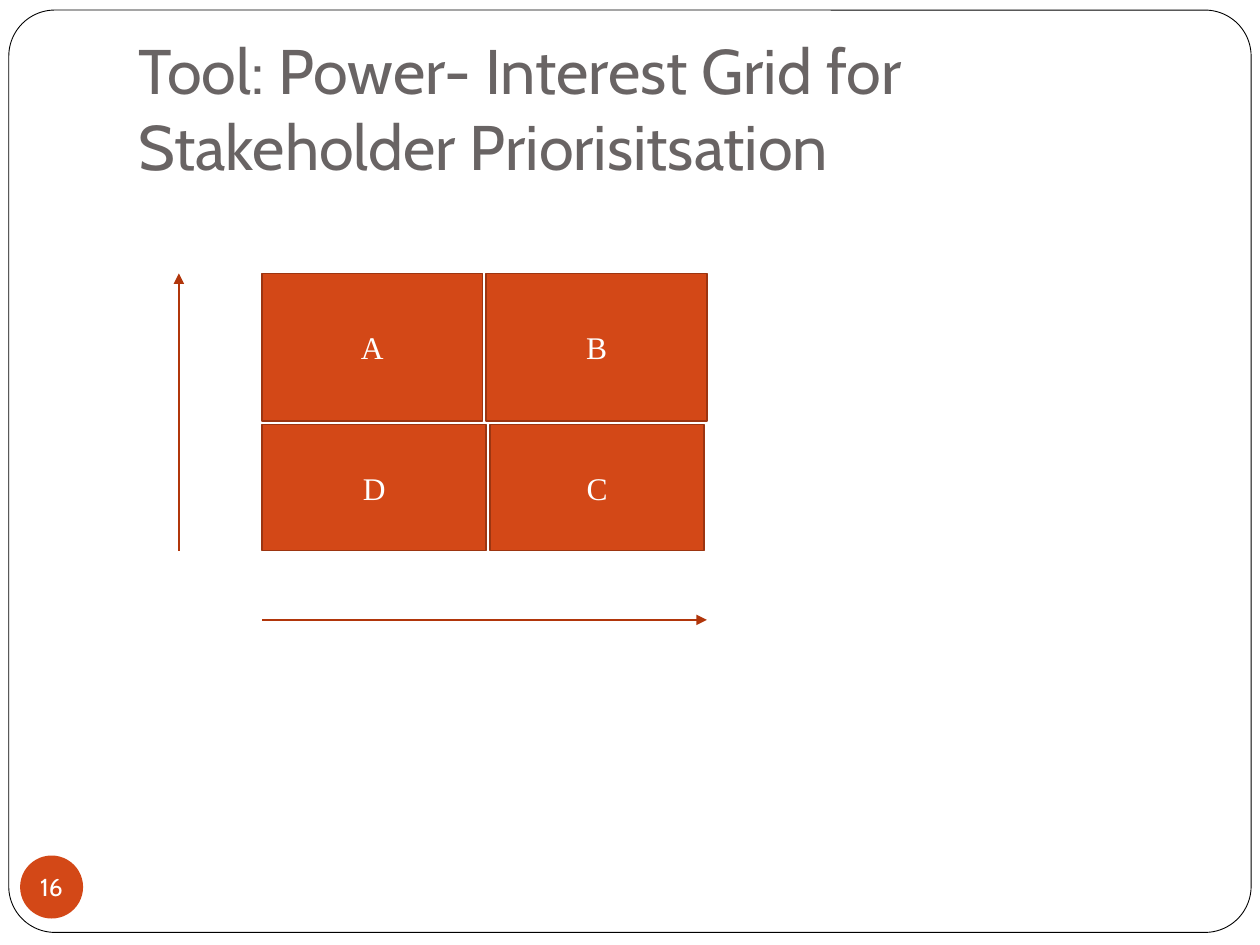
from dataclasses import dataclass
from typing import Any

from lxml import etree
from pptx import Presentation
from pptx.dml.color import RGBColor
from pptx.enum import shapes as sh, text as tx
from pptx.oxml import ns
from pptx.util import Inches, Pt

HUES = {
    "paper": "FFFFFF",
    "frame": "000000",
    "title": "696464",
    "fill": "D34817",
    "edge": "9C3511",
    "arrow": "B1360B",
}
LEFT, TOP, RIGHT, BASE = 2.08, 2.17, 5.61, 4.37
LOW = 3.37


@dataclass(frozen=True)
class Box:
    kind: Any
    x: float
    y: float
    w: float
    h: float
    fill: str
    line: str = ""
    width: float = 1
    label: str = ""
    size: int = 18
    face: str = "Times New Roman"


@dataclass(frozen=True)
class Arrow:
    x1: float
    y1: float
    x2: float
    y2: float


def hue(name: str) -> RGBColor:
    return RGBColor.from_string(HUES[name])


def apply(obj: Any, vals: dict[str, Any]) -> None:
    for key, val in vals.items():
        setattr(obj, key, val)


def write(frame: Any, label: str, face: str, size: int, tint: str, align: Any) -> None:
    frame.text = label
    para = frame.paragraphs[0]
    para.alignment = align
    font = para.runs[0].font
    apply(font, {"name": face, "size": Pt(size)})
    font.color.rgb = hue(tint)


def draw_box(slide: Any, box: Box) -> Any:
    place = [Inches(v) for v in (box.x, box.y, box.w, box.h)]
    shape = slide.shapes.add_shape(box.kind, *place)
    shape.shadow.inherit = False
    shape.fill.solid()
    shape.fill.fore_color.rgb = hue(box.fill)
    if box.line:
        shape.line.color.rgb = hue(box.line)
        shape.line.width = Pt(box.width)
    else:
        shape.line.fill.background()
    if box.label:
        frame = shape.text_frame
        frame.vertical_anchor = tx.MSO_ANCHOR.MIDDLE
        write(frame, box.label, box.face, box.size, "paper", tx.PP_ALIGN.CENTER)
    return shape


def draw_arrow(slide: Any, arrow: Arrow) -> None:
    ends = [Inches(v) for v in (arrow.x1, arrow.y1, arrow.x2, arrow.y2)]
    link = slide.shapes.add_connector(sh.MSO_CONNECTOR.STRAIGHT, *ends)
    link.line.color.rgb = hue("arrow")
    link.line.width = Pt(0.75)
    etree.SubElement(link.line._get_or_add_ln(), ns.qn("a:tailEnd"), type="triangle")
    etree.SubElement(link._element.spPr, ns.qn("a:effectLst"))


def draw_title(slide: Any, label: str) -> None:
    title = slide.shapes.title
    apply(title, {
        "left": Inches(1), "top": Inches(0.3),
        "width": Inches(8.5), "height": Inches(1.25),
    })
    frame = title.text_frame
    apply(frame, {
        "word_wrap": True,
        "auto_size": tx.MSO_AUTO_SIZE.NONE,
        "vertical_anchor": tx.MSO_ANCHOR.BOTTOM,
        "margin_left": Inches(0.1), "margin_top": Inches(0.05),
        "margin_right": Inches(0.1), "margin_bottom": Inches(0.1),
    })
    write(frame, label, "Cabin", 36, "title", tx.PP_ALIGN.LEFT)


def draw_frame(slide: Any) -> None:
    frame = draw_box(slide, Box(
        sh.MSO_SHAPE.ROUNDED_RECTANGLE, 0.07, 0.08, 9.86, 7.32,
        "paper", "frame", 0.5))
    frame.adjustments[0] = 0.05
    slide.shapes._spTree.insert(2, frame._element)


def draw_badge(slide: Any, label: str) -> None:
    badge = draw_box(slide, Box(
        sh.MSO_SHAPE.OVAL, 0.16, 6.79, 0.5, 0.5, "fill",
        label=label, size=14, face="Cabin"))
    sides = ("left", "top", "right", "bottom")
    apply(badge.text_frame, {f"margin_{side}": 0 for side in sides})
    badge.text_frame.word_wrap = False


def draw_grid(slide: Any) -> None:
    rows = (
        (TOP, 1.17, (("A", LEFT, 1.75), ("B", 3.86, 1.75))),
        (LOW, BASE - LOW, (("D", LEFT, 1.78), ("C", 3.89, 1.7))),
    )
    for y, h, cells in rows:
        for label, x, w in cells:
            draw_box(slide, Box(
                sh.MSO_SHAPE.RECTANGLE, x, y, w, h, "fill", "edge", label=label))


def main() -> None:
    deck = Presentation()
    apply(deck, {"slide_width": Inches(10), "slide_height": Inches(7.5)})
    slide = deck.slides.add_slide(deck.slide_layouts[5])
    draw_frame(slide)
    draw_title(slide, "Tool: Power- Interest Grid for Stakeholder Priorisitsation")
    draw_badge(slide, "16")
    draw_grid(slide)
    for arrow in (Arrow(1.42, BASE, 1.42, TOP), Arrow(LEFT, 4.92, RIGHT, 4.92)):
        draw_arrow(slide, arrow)
    deck.save("out.pptx")


if __name__ == "__main__":
    main()
